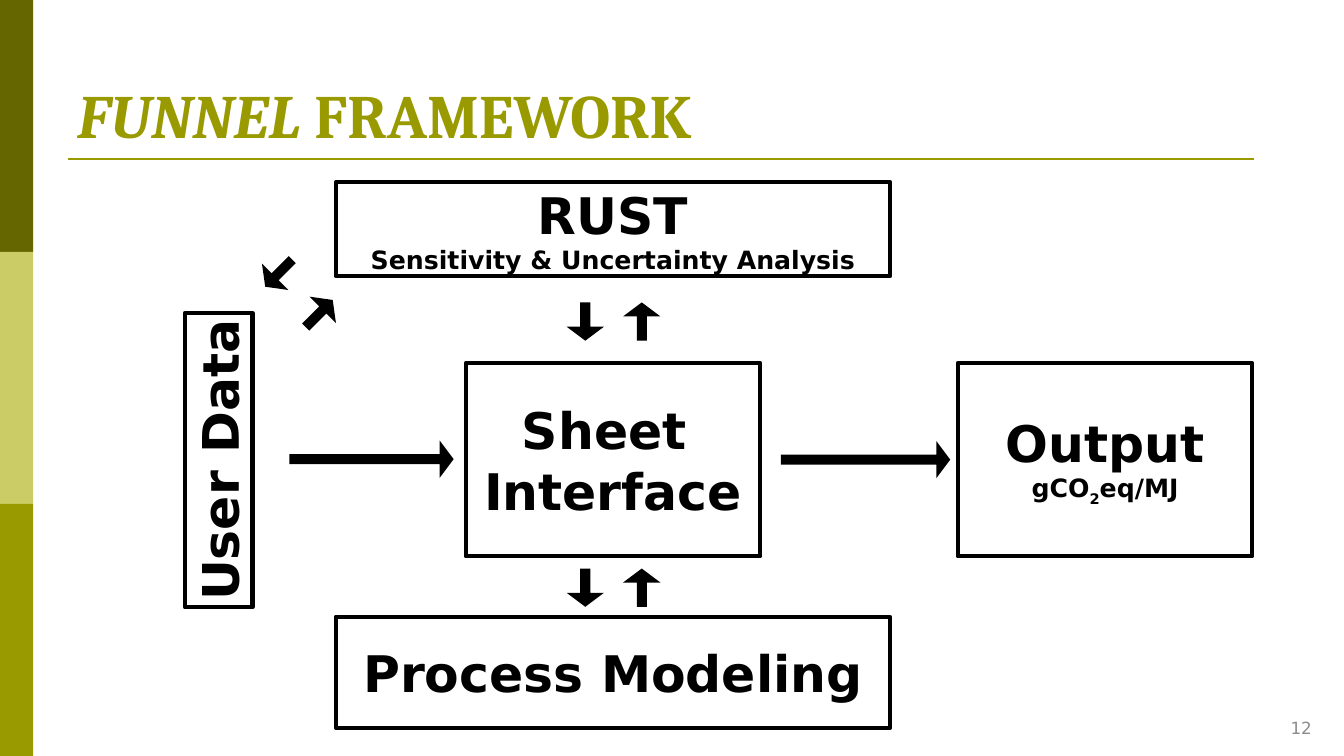
"""Build the FUNNEL framework slide."""
from dataclasses import dataclass

from lxml import etree
from pptx import Presentation
from pptx import util as u
from pptx.dml.color import RGBColor
from pptx.enum import shapes, text
from pptx.oxml.ns import qn
from pptx.shapes.autoshape import Shape
from pptx.slide import Slide
from pptx.text.text import TextFrame


@dataclass(frozen=True)
class Theme:
    """Colours, fonts and type sizes."""
    bands: tuple[str, ...] = ("666600", "CCCC66", "999900")
    accent: str = "999900"
    ink: str = "000000"
    muted: str = "8C8C8C"
    title_font: str = "Cambria"
    body_font: str = "DejaVu Sans"
    title: int = 44
    label: int = 36
    detail: int = 18
    number: int = 12


THEME = Theme()


@dataclass(frozen=True)
class Span:
    """A stretch of text in one format."""
    words: str
    size: int = THEME.label
    font: str = THEME.body_font
    color: str = THEME.ink
    bold: bool = True
    italic: bool = False
    baseline: int = 0


Lines = tuple[tuple[Span, ...], ...]


@dataclass(frozen=True)
class Frame:
    """Left, top, width and height in inches."""
    left: float
    top: float
    width: float
    height: float

    def lengths(self) -> tuple[u.Length, ...]:
        """Give the four measures as lengths."""
        return tuple(u.Inches(n) for n in (self.left, self.top, self.width, self.height))


@dataclass(frozen=True)
class Stage:
    """An outlined box of the framework."""
    frame: Frame
    lines: Lines
    rotation: int = 0


@dataclass(frozen=True)
class Arrow:
    """A block arrow that points down before rotation."""
    left: float
    top: float
    length: float = 0.38
    rotation: int = 0


STAGES = (
    Stage(Frame(4.62, 3.6, 2.92, 1.92), ((Span("Sheet "),), (Span("Interface"),))),
    Stage(Frame(0.71, 4.23, 2.92, 0.67), ((Span("User Data"),),), 270),
    Stage(Frame(3.33, 6.12, 5.5, 1.1), ((Span("Process Modeling"),),)),
    Stage(Frame(9.5, 3.6, 2.92, 1.92), (
        (Span("Output"),),
        (Span("gCO", THEME.detail), Span("2", THEME.detail, baseline=-25000),
         Span("eq/MJ", THEME.detail)),
    )),
    Stage(Frame(3.33, 1.81, 5.5, 0.93), (
        (Span("RUST"),),
        (Span("Sensitivity & Uncertainty Analysis", THEME.detail),),
    )),
)

EXCHANGES = tuple(
    Arrow(left, top, rotation=rotation)
    for top in (5.64, 3.0)
    for left, rotation in ((5.62, 0), (6.18, 180))
)
ARROWS = EXCHANGES + (
    Arrow(3.5, 3.74, 1.63, 270),
    Arrow(8.4, 3.72, 1.68, 270),
    Arrow(2.58, 2.52, rotation=45),
    Arrow(2.98, 2.92, rotation=225),
)


def write(frame: TextFrame, lines: Lines, align: text.PP_ALIGN, anchor: text.MSO_ANCHOR,
          wrap: bool) -> None:
    """Fill a text frame with formatted lines."""
    frame.word_wrap = wrap
    frame.vertical_anchor = anchor
    frame.text = "\n".join(spans[0].words for spans in lines)
    for paragraph, spans in zip(frame.paragraphs, lines):
        paragraph.alignment = align
        for span in spans[1:]:
            paragraph.add_run().text = span.words
        for run, span in zip(paragraph.runs, spans):
            run.font.name = span.font
            run.font.size = u.Pt(span.size)
            run.font.bold = span.bold
            run.font.italic = span.italic
            run.font.color.rgb = RGBColor.from_string(span.color)
            if span.baseline:
                run._r.get_or_add_rPr().set("baseline", str(span.baseline))


def add_solid(page: Slide, kind: shapes.MSO_SHAPE, frame: Frame, color: str) -> Shape:
    """Add a filled shape without outline."""
    shape = page.shapes.add_shape(kind, *frame.lengths())
    shape.shadow.inherit = False
    shape.fill.solid()
    shape.fill.fore_color.rgb = RGBColor.from_string(color)
    shape.line.fill.background()
    return shape


def add_stage(page: Slide, stage: Stage) -> None:
    """Add an outlined box with centred text."""
    box = page.shapes.add_shape(shapes.MSO_SHAPE.RECTANGLE, *stage.frame.lengths())
    box.shadow.inherit = False
    box.rotation = stage.rotation
    box.fill.background()
    box.line.color.rgb = RGBColor.from_string(THEME.ink)
    box.line.width = u.Pt(3)
    write(box.text_frame, stage.lines, text.PP_ALIGN.CENTER, text.MSO_ANCHOR.MIDDLE, False)


def add_arrow(page: Slide, arrow: Arrow) -> None:
    """Add a black block arrow."""
    frame = Frame(arrow.left, arrow.top, 0.37, arrow.length)
    shape = add_solid(page, shapes.MSO_SHAPE.DOWN_ARROW, frame, THEME.ink)
    shape.rotation = arrow.rotation
    shape.adjustments[0] = 0.27
    shape.adjustments[1] = 0.375


def add_text(page: Slide, frame: Frame, spans: tuple[Span, ...], align: text.PP_ALIGN,
             anchor: text.MSO_ANCHOR) -> None:
    """Add a one-line text box."""
    box = page.shapes.add_textbox(*frame.lengths())
    write(box.text_frame, (spans,), align, anchor, True)


def add_rule(page: Slide) -> None:
    """Add the line under the title."""
    start, end, height = u.Inches(0.67), u.Inches(12.44), u.Inches(1.58)
    rule = page.shapes.add_connector(shapes.MSO_CONNECTOR.STRAIGHT, start, height, end, height)
    rule.line.color.rgb = RGBColor.from_string(THEME.accent)
    rule.line.width = u.Pt(1.5)
    etree.SubElement(rule.element.spPr, qn("a:effectLst"))


def main() -> None:
    """Draw the slide and save the deck."""
    deck = Presentation()
    deck.slide_width, deck.slide_height = u.Inches(13.33), u.Inches(7.5)
    page = deck.slides.add_slide(deck.slide_layouts[6])
    for index, color in enumerate(THEME.bands):
        add_solid(page, shapes.MSO_SHAPE.RECTANGLE, Frame(0, 2.5 * index, 0.33, 2.5), color)
    add_rule(page)
    title = (Span("FUNNEL", THEME.title, THEME.title_font, THEME.accent, italic=True),
             Span(" FRAMEWORK", THEME.title, THEME.title_font, THEME.accent))
    add_text(page, Frame(0.67, 0.3, 10.56, 1.25), title, text.PP_ALIGN.LEFT,
             text.MSO_ANCHOR.BOTTOM)
    number = Span("12", THEME.number, color=THEME.muted, bold=False)
    add_text(page, Frame(12.22, 7.02, 0.89, 0.4), (number,), text.PP_ALIGN.RIGHT,
             text.MSO_ANCHOR.MIDDLE)
    for stage in STAGES:
        add_stage(page, stage)
    for arrow in ARROWS:
        add_arrow(page, arrow)
    deck.save("out.pptx")


if __name__ == "__main__":
    main()
